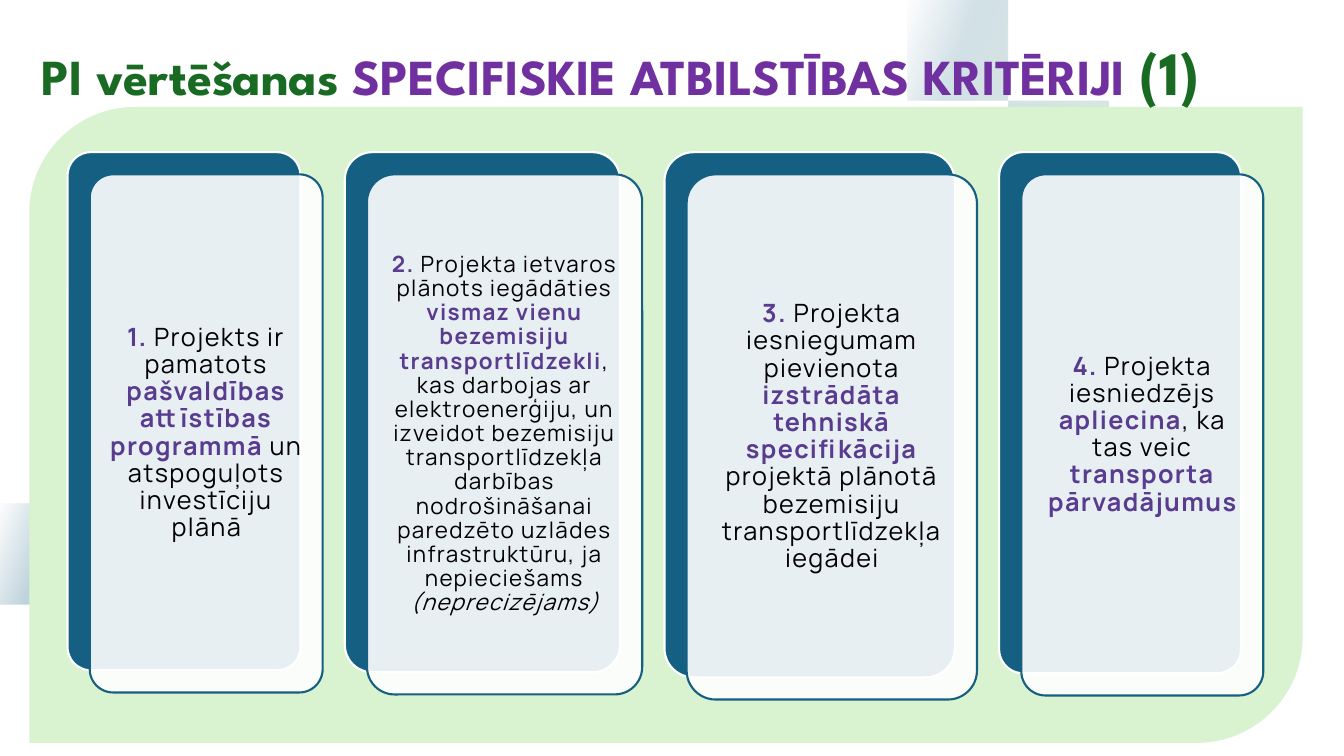
from dataclasses import dataclass
from lxml.etree import SubElement
from pptx import Presentation
from pptx.dml.color import RGBColor
from pptx.enum.shapes import MSO_SHAPE
from pptx.enum.text import MSO_ANCHOR, PP_ALIGN
from pptx.oxml import parse_xml
from pptx.oxml.ns import nsdecls, qn
from pptx.util import Inches, Pt


@dataclass(frozen=True)
class Theme:
    white: str = "FFFFFF"
    black: str = "000000"
    blue: str = "156082"
    leaf: str = "4EA72E"
    mint: str = "D9F2D0"
    green: str = "196B24"
    purple: str = "7030A0"
    violet: str = "593C8F"
    head: str = "League Spartan"
    body: str = "Manrope"
    title: int = 36
    count: int = 44
    large: int = 18
    small: int = 16


theme = Theme()


def write(para, text, font, size, color, bold=False, italic=False, space=0):
    """Add a formatted run; space is the letter spacing in points."""
    run = para.add_run()
    run.text = text
    run.font.name, run.font.size = font, Pt(size)
    run.font.bold, run.font.italic = bold, italic
    run.font.color.rgb = RGBColor.from_string(color)
    if space:
        run._r.get_or_add_rPr().set("spc", str(space * 100))


def smooth(knots, steps=6):
    """Return points on a smooth curve through the knots."""
    ends = [knots[0], *knots, knots[-1]]
    points = []
    for a, b, c, d in zip(ends, ends[1:], ends[2:], ends[3:]):
        for t in (n / steps for n in range(steps)):
            points.append(tuple(
                q + t / 2 * (r - p + t * (2 * p - 5 * q + 4 * r - s
                                          + t * (3 * (q - r) + s - p)))
                for p, q, r, s in zip(a, b, c, d)))
    return points + [knots[-1]]


deck = Presentation()
deck.slide_width, deck.slide_height = Inches(13.33), Inches(7.5)
slide = deck.slides.add_slide(deck.slide_layouts[5])
shapes = slide.shapes

# Ribbons: outer edge, then inner edge back to the start
top = [(9.11, 0), (9.33, 0.68), (9.73, 1.22), (10.6, 2.04), (11.81, 2.35),
       (12.57, 2.19), (13.33, 1.71)]
low = [(3.16, 7.5), (2.84, 6.53), (2.22, 5.89), (1.41, 5.46), (0.49, 5.31),
       (0, 5.36)]
ribbons = [
    ([(9.07, 0), (9.16, 0.5), (9.42, 0.96), (10.01, 1.82), (10.41, 2.2),
      (10.91, 2.46), (11.83, 2.61), (12.61, 2.45), (13.33, 2.02)],
     [(13.33, 1.65), (12.93, 1.94), (12.48, 2.18), (11.85, 2.31),
      (11.25, 2.27), (10.55, 2.01), (9.97, 1.52), (9.48, 0.92),
      (9.2, 0.49), (9.1, 0)]),
    ([(9.11, 0), (9.19, 0.46), (9.43, 0.91), (10.02, 1.72), (10.44, 2.04),
      (10.94, 2.25), (11.84, 2.39), (12.55, 2.25), (13.33, 1.81)],
     [(13.33, 1.32), (12.81, 1.7), (12.41, 1.94), (11.86, 2.09),
      (11.27, 2.05), (10.64, 1.77), (9.8, 0.95), (9.43, 0.49), (9.27, 0)]),
    (top, [(13.33, 1.13), (13.08, 1.31), (12.46, 1.72), (11.81, 1.88),
           (10.88, 1.66), (10.13, 0.95), (9.7, 0.35), (9.6, 0)]),
    (top, [(13.33, 1.01), (13.02, 1.24), (12.39, 1.65), (11.81, 1.79),
           (10.9, 1.57), (10.21, 0.9), (9.8, 0.33), (9.7, 0)]),
    (low, [(0, 5.85), (0.49, 5.78), (1.28, 5.93), (1.99, 6.33),
           (2.48, 6.9), (2.65, 7.5)]),
    (low, [(0, 5.77), (0.49, 5.7), (1.31, 5.85), (2.05, 6.27),
           (2.55, 6.86), (2.73, 7.5)]),
    ([(3.16, 7.5), (2.97, 6.72), (2.44, 6.03), (1.7, 5.54), (0.83, 5.3),
      (0.38, 5.29), (0, 5.34)],
     [(0, 5.55), (0.39, 5.5), (1.21, 5.59), (2.3, 6.17), (2.81, 6.79),
      (3.02, 7.5)]),
    ([(3.17, 7.5), (3, 6.74), (2.52, 5.97), (1.78, 5.4), (0.86, 5.13),
      (0.37, 5.14), (0, 5.21)],
     [(0, 5.36), (0.39, 5.31), (1.05, 5.37), (1.67, 5.59), (2.4, 6.08),
      (2.94, 6.76), (3.14, 7.5)]),
]
stops = "".join(
    f'<a:gs pos="{place * 1000}"><a:srgbClr val="{color}">'
    '<a:alpha val="10000"/></a:srgbClr></a:gs>'
    for place, color in [(2, theme.white), (16, theme.leaf),
                         (85, theme.blue), (100, theme.white)])
for outer, inner in ribbons:
    first, *rest = smooth(outer) + smooth(inner)
    pen = shapes.build_freeform(*first, scale=Inches(1))
    pen.add_line_segments(rest)
    ribbon = pen.convert_to_shape()
    ribbon.shadow.inherit = False
    ribbon.line.fill.background()
    ribbon._element.spPr.find(qn("a:custGeom")).addnext(parse_xml(
        f'<a:gradFill {nsdecls("a")}><a:gsLst>{stops}</a:gsLst>'
        '<a:lin ang="12000000" scaled="0"/></a:gradFill>'))

# Green panel
panel = shapes.add_shape(MSO_SHAPE.ROUND_2_DIAG_RECTANGLE, Inches(0.29),
                         Inches(1.06), Inches(12.63), Inches(6.31))
panel.rotation = 180
panel.shadow.inherit = False
panel.fill.solid()
panel.fill.fore_color.rgb = RGBColor.from_string(theme.mint)
panel.line.fill.background()

# Criteria cards: width, height, text size, runs
strong = dict(color=theme.violet, bold=True)
plain = dict(color=theme.black)
note = dict(color=theme.black, italic=True)
cards = [
    (2.31, 5.14, theme.large, [
        ("1. ", strong), ("Projekts ir pamatots ", plain),
        ("pašvaldības attīstības programmā ", strong),
        ("un atspoguļots investīciju plānā", plain)]),
    (2.73, 5.16, theme.small, [
        ("2. ", strong), ("Projekta ietvaros plānots iegādāties ", plain),
        ("vismaz vienu bezemisiju transportlīdzekli", strong),
        (", kas darbojas ar elektroenerģiju, un izveidot bezemisiju "
         "transportlīdzekļa darbības nodrošināšanai paredzēto uzlādes "
         "infrastruktūru, ja nepieciešams ", plain),
        ("(neprecizējams)", note)]),
    (2.88, 5.21, theme.large, [
        ("3. ", strong), ("Projekta iesniegumam pievienota ", plain),
        ("izstrādāta tehniskā specifikācija ", strong),
        ("projektā plānotā bezemisiju transportlīdzekļa iegādei", plain)]),
    (2.4, 5.17, theme.large, [
        ("4. ", strong), ("Projekta iesniedzējs ", plain),
        ("apliecina", strong), (", ka tas veic ", plain),
        ("transporta pārvadājumus", strong)]),
]
left, upper, shift = 0.67, 1.51, 0.22
for wide, high, size, runs in cards:
    for step, fill, edge in [(0, theme.blue, theme.white),
                             (shift, theme.white, theme.blue)]:
        card = shapes.add_shape(
            MSO_SHAPE.ROUNDED_RECTANGLE, Inches(left + step),
            Inches(upper + step), Inches(wide), Inches(high))
        card.adjustments[0] = 0.1
        card.shadow.inherit = False
        card.fill.solid()
        card.fill.fore_color.rgb = RGBColor.from_string(fill)
        card.line.color.rgb = RGBColor.from_string(edge)
        card.line.width = Pt(1.5)
    # The front card lets the back one show through
    tint = card._element.spPr.find(qn("a:solidFill"))[0]
    SubElement(tint, qn("a:alpha")).set("val", "90000")

    inset = 0.03 * wide
    box = shapes.add_textbox(
        Inches(left + shift + inset), Inches(upper + shift + inset),
        Inches(wide - 2 * inset), Inches(high - 2 * inset))
    frame = box.text_frame
    frame.word_wrap = True
    frame.vertical_anchor = MSO_ANCHOR.MIDDLE
    frame.margin_left = frame.margin_right = Inches(0.07)
    frame.margin_top = frame.margin_bottom = Inches(0.07)
    para = frame.paragraphs[0]
    para.alignment, para.line_spacing = PP_ALIGN.CENTER, 0.9
    for text, style in runs:
        write(para, text, theme.body, size, space=1, **style)
    left += wide + 2 * shift

# Title, in front of the ribbons
title = shapes.title
title.left, title.top = Inches(0.41), Inches(0.23)
title.width, title.height = Inches(11.77), Inches(0.79)
frame = title.text_frame
frame.word_wrap = True
frame.vertical_anchor = MSO_ANCHOR.TOP
frame.margin_left = frame.margin_right = 0
frame.margin_top = frame.margin_bottom = 0
para = frame.paragraphs[0]
para.alignment, para.line_spacing = PP_ALIGN.LEFT, Pt(60.2)
for text, size, color in [
        ("PI vērtēšanas ", theme.title, theme.green),
        ("SPECIFISKIE ATBILSTĪBAS KRITĒRIJI ", theme.title, theme.purple),
        ("(1)", theme.count, theme.green)]:
    write(para, text, theme.head, size, color, bold=True)
shapes._spTree.append(title._element)

deck.save("out.pptx")
